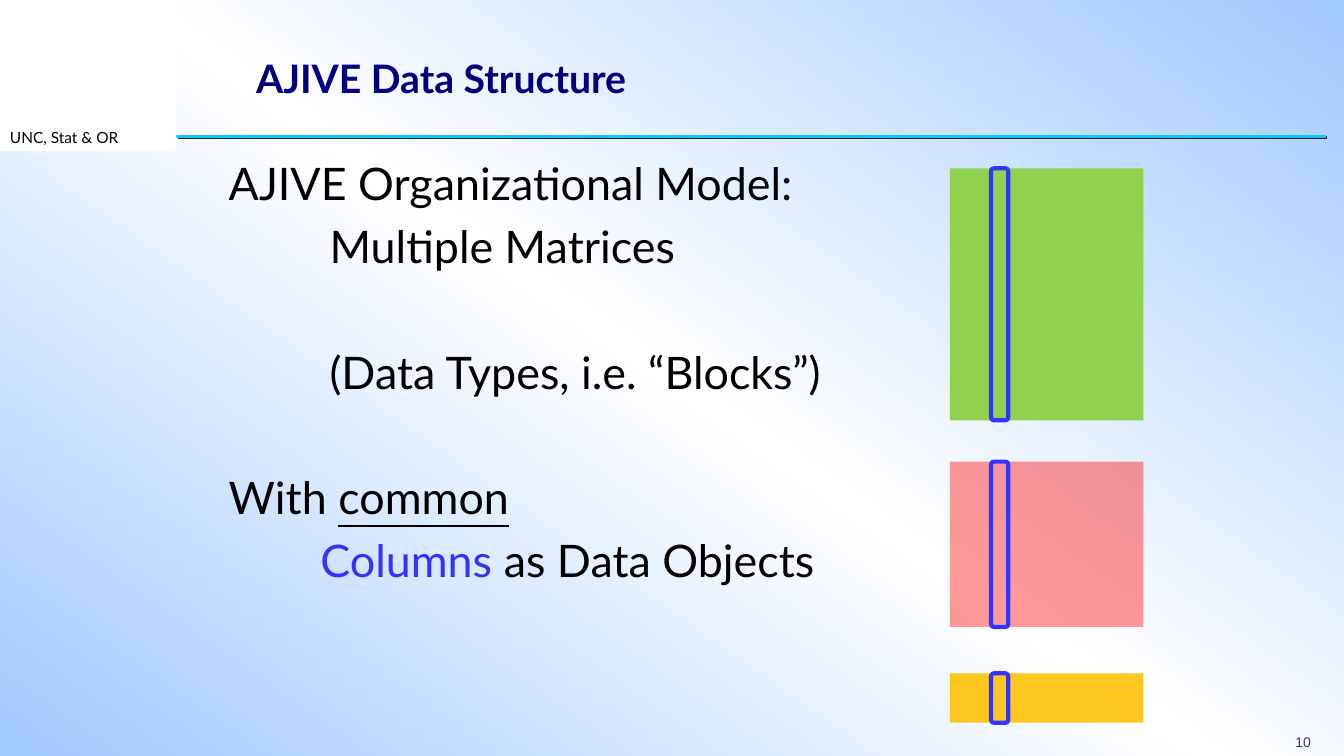
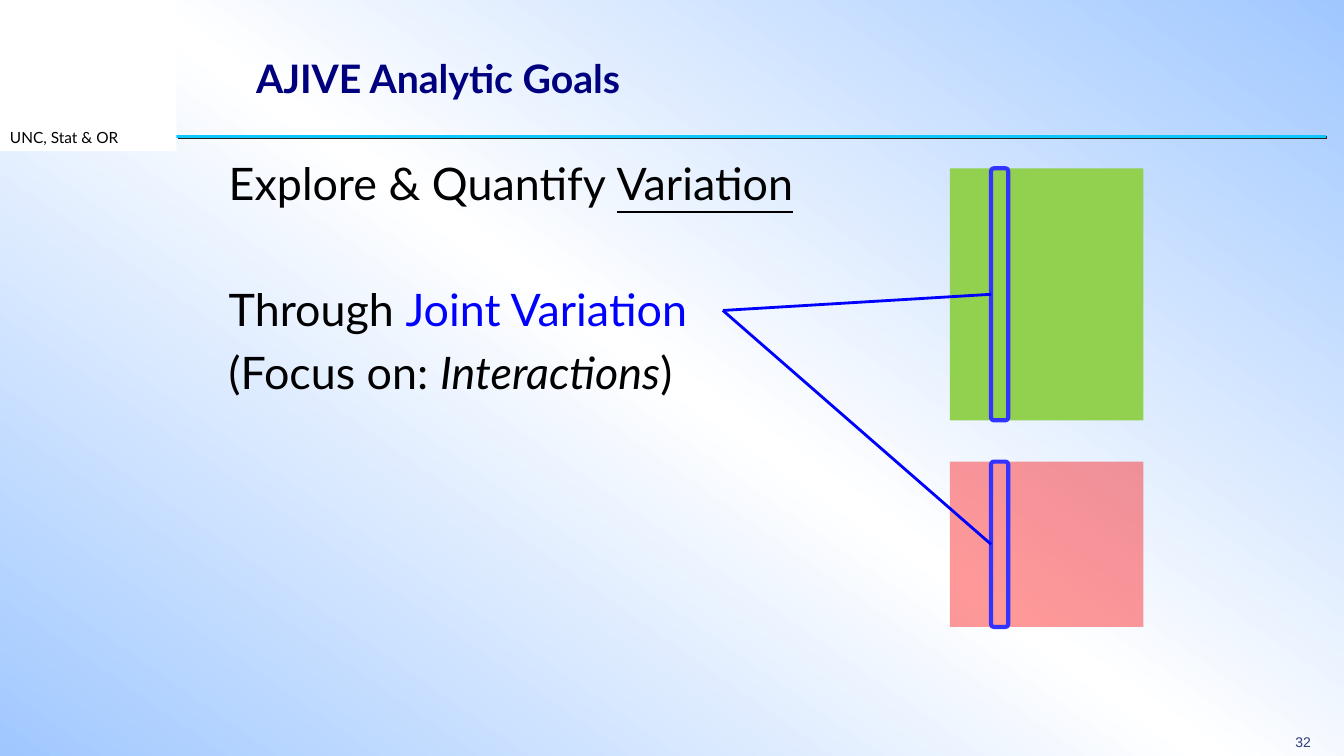
from copy import deepcopy

from lxml import etree
from pptx import Presentation
from pptx import util as u
from pptx.dml.color import RGBColor
from pptx.enum import shapes, text
from pptx.oxml.ns import qn

COLORS = {
    "sky": "A0C8FF", "white": "FFFFFF", "navy": "00007F", "black": "000000",
    "rule": "0FC7FF", "shade": "232323", "number": "2A3D7A",
    "column": "3333FF", "joint": "0000FF",
    "green": "92D050", "red": "FF0000", "amber": "FFC000",
}

TITLE_STYLE = {"name": "Lato", "size": u.Pt(28), "bold": True, "color": "navy"}
BODY_STYLE = {"name": "Lato", "size": u.Pt(32), "color": "black"}
LABEL_STYLE = {"name": "Lato", "size": u.Pt(11), "color": "black"}
NUMBER_STYLE = {"name": "Arial", "size": u.Pt(10), "color": "number"}

LINE_GAP = 6.4
BLANK_GAP = 51.2
BLOCK_LEFT, BLOCK_WIDTH = 9.42, 1.92
BAR_LEFT, BAR_WIDTH = 9.83, 0.17
JOINT_POINT = (7.17, 3.08)

BLOCKS = [
    {"top": 1.67, "height": 2.5, "color": "green", "opacity": 100},
    {"top": 4.58, "height": 1.64, "color": "red", "opacity": 40},
    {"top": 6.68, "height": 0.49, "color": "amber", "opacity": 88},
]

SLIDES = [
    {
        "title": "AJIVE Data Structure",
        "number": "10",
        "lines": [
            (0, 0, [("AJIVE Organizational Model:", {})]),
            (1, LINE_GAP, [("Multiple Matrices", {})]),
            (1, BLANK_GAP, [("(Data Types, i.e. “Blocks”)", {})]),
            (0, BLANK_GAP, [("With ", {}), ("common", {"underline": True})]),
            (0.91, LINE_GAP, [("Columns", {"color": "column"}), (" as Data Objects", {})]),
        ],
        "blocks": BLOCKS,
        "joined": False,
    },
    {
        "title": "AJIVE Analytic Goals",
        "number": "32",
        "lines": [
            (0, 0, [("Explore & Quantify ", {}), ("Variation", {"underline": True})]),
            (0, BLANK_GAP, [("Through ", {}), ("Joint Variation", {"color": "joint"})]),
            (0, LINE_GAP, [("(Focus on: ", {}), ("Interactions", {"italic": True}), (")", {})]),
        ],
        "blocks": BLOCKS[:2],
        "joined": True,
    },
]


def rgb(name):
    return RGBColor.from_string(COLORS[name])


def inches(*values):
    return [u.Inches(value) for value in values]


def add_span(para, words, style):
    span = para.add_run()
    span.text = words
    for key, value in style.items():
        if key == "color":
            span.font.color.rgb = rgb(value)
        else:
            setattr(span.font, key, value)


def add_text_box(page, place, wrap):
    box = page.shapes.add_textbox(*inches(*place))
    box.text_frame.word_wrap = wrap
    return box.text_frame


def add_box(page, kind, place, fill=None, opacity=100, line=None):
    box = page.shapes.add_shape(kind, *inches(*place))
    box.shadow.inherit = False
    if fill:
        box.fill.solid()
        box.fill.fore_color.rgb = rgb(fill)
        if opacity < 100:
            color = box.fill._xPr.find(qn("a:solidFill"))[0]
            etree.SubElement(color, qn("a:alpha"), val=str(opacity * 1000))
    else:
        box.fill.background()
    if line:
        box.line.color.rgb = rgb(line)
        box.line.width = u.Pt(3)
    else:
        box.line.fill.background()
    return box


def add_line(page, start, end, color, width):
    line = page.shapes.add_connector(shapes.MSO_CONNECTOR.STRAIGHT, *inches(*start, *end))
    line.line.color.rgb = rgb(color)
    line.line.width = u.Pt(width)
    effects = etree.SubElement(line.element.spPr, qn("a:effectLst"))
    return line, effects


def set_background(master):
    fill = master.background.fill
    fill.gradient()
    fill.gradient_angle = 235
    for stop in fill.gradient_stops:
        stop.color.rgb = rgb("sky")
    first = next(master.element.cSld.iter(qn("a:gs")))
    first.addnext(deepcopy(first))
    for stop, name, position in zip(fill.gradient_stops, ("sky", "white", "sky"), (0, 0.5, 1)):
        stop.color.rgb = rgb(name)
        stop.position = position


def add_frame(page, title, number):
    _, effects = add_line(page, (1.75, 1.35), (13.15, 1.35), "rule", 2.25)
    shadow = etree.SubElement(effects, qn("a:outerShdw"), dist=str(u.Pt(1.4)), dir="2700000")
    etree.SubElement(shadow, qn("a:srgbClr"), val=COLORS["shade"])

    corner = add_box(page, shapes.MSO_SHAPE.RECTANGLE, (0, 0, 1.75, 1.5), "white")
    corner.text_frame.vertical_anchor = text.MSO_ANCHOR.BOTTOM
    label = corner.text_frame.paragraphs[0]
    label.alignment = text.PP_ALIGN.LEFT
    add_span(label, "UNC, Stat & OR", LABEL_STYLE)

    para = add_text_box(page, (12.75, 7.25, 0.37, 0.25), False).paragraphs[0]
    para.line_spacing = 0.9
    add_span(para, number, NUMBER_STYLE)

    heading = page.shapes.title
    heading.left, heading.top, heading.width, heading.height = inches(2.44, 0.5, 10.42, 0.54)
    heading.text_frame.vertical_anchor = text.MSO_ANCHOR.MIDDLE
    para = heading.text_frame.paragraphs[0]
    para.alignment = text.PP_ALIGN.LEFT
    add_span(para, title, TITLE_STYLE)


def add_body(page, lines):
    frame = add_text_box(page, (2.17, 1.5, 9.04, 5.22), True)
    for index, (indent, gap, spans) in enumerate(lines):
        para = frame.add_paragraph() if index else frame.paragraphs[0]
        para._p.get_or_add_pPr().set("marL", str(u.Inches(indent)))
        para.space_before = u.Pt(gap)
        for words, style in spans:
            add_span(para, words, {**BODY_STYLE, **style})


def add_blocks(page, blocks, joined):
    for block in blocks:
        top, height = block["top"], block["height"]
        add_box(page, shapes.MSO_SHAPE.RECTANGLE, (BLOCK_LEFT, top, BLOCK_WIDTH, height),
                block["color"], block["opacity"])
        bar = add_box(page, shapes.MSO_SHAPE.ROUNDED_RECTANGLE,
                      (BAR_LEFT, top, BAR_WIDTH, height), line="column")
        if joined:
            line, _ = add_line(page, (BAR_LEFT, top + height / 2), JOINT_POINT, "joint", 2)
            line.begin_connect(bar, 1)


def main():
    deck = Presentation()
    deck.slide_width, deck.slide_height = inches(13.33, 7.5)
    set_background(deck.slide_master)
    for content in SLIDES:
        page = deck.slides.add_slide(deck.slide_layouts[5])
        add_frame(page, content["title"], content["number"])
        add_body(page, content["lines"])
        add_blocks(page, content["blocks"], content["joined"])
    deck.save("out.pptx")


if __name__ == "__main__":
    main()
